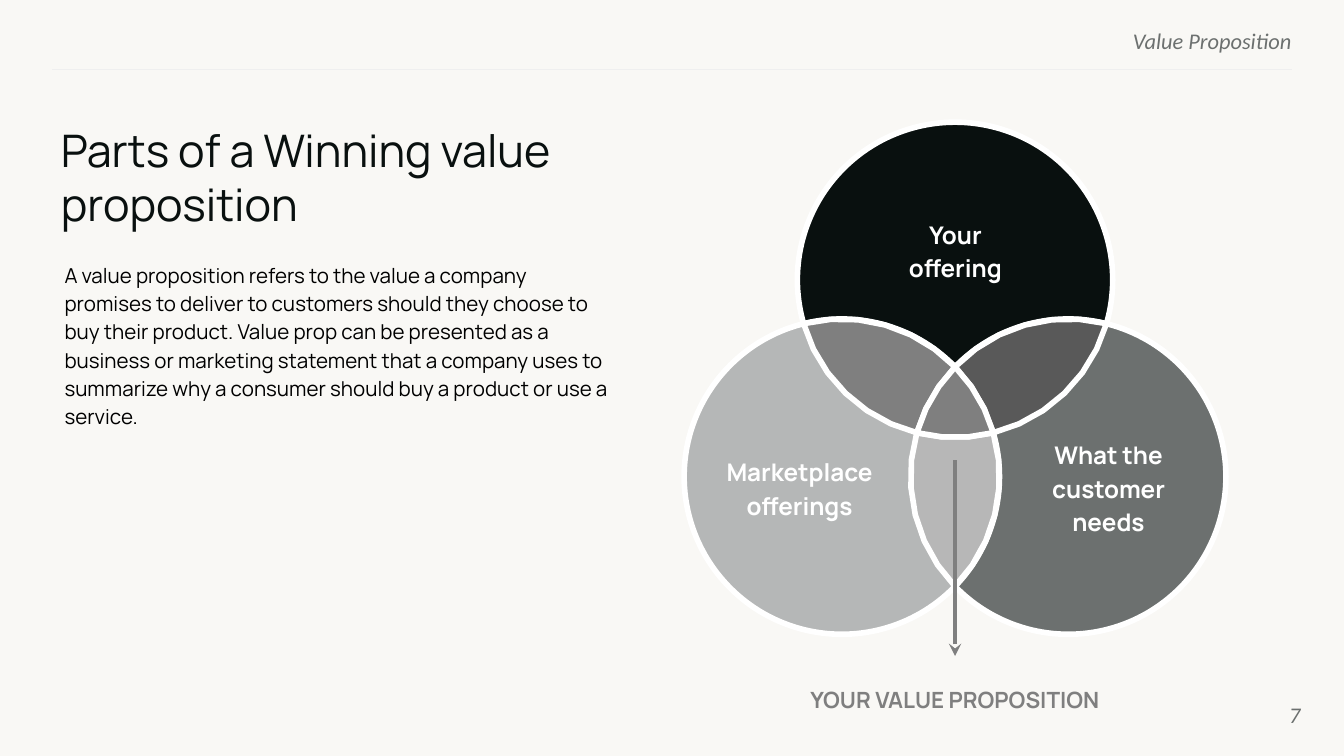
import math
from dataclasses import dataclass

import pptx
import pptx.dml.color
import pptx.enum.shapes
import pptx.enum.text
import pptx.oxml
import pptx.oxml.ns
import pptx.util

Cm = pptx.util.Cm
ALIGN = pptx.enum.text.PP_ALIGN
ANCHOR = pptx.enum.text.MSO_ANCHOR


@dataclass(frozen=True)
class Theme:
    paper: str = "F9F8F5"
    ink: str = "09100F"
    black: str = "000000"
    white: str = "FFFFFF"
    slate: str = "6C706F"
    silver: str = "B5B7B7"
    rule: str = "EFEFEF"
    mid_gray: str = "7F7F7F"
    dark_gray: str = "595959"
    light_gray: str = "B7B7B7"
    heading_font: str = "Manrope"
    running_font: str = "Calibri"
    title_size: float = 24
    label_size: float = 13
    small_size: float = 12
    body_size: float = 11
    outline: float = 3


THEME = Theme()

# Venn geometry in centimetres
RADIUS = 2.98
OFFERING = (18.05, 5.29)
MARKET = (15.91, 9.01)
CUSTOMER = (20.19, 9.01)
CIRCLES = (OFFERING, CUSTOMER, MARKET)
MIDDLE = tuple(sum(axis) / 3 for axis in zip(*CIRCLES))
ARC_STEP = math.radians(11)


def rgb(value):
    return pptx.dml.color.RGBColor.from_string(value)


def set_format(target, values):
    for attribute, value in values.items():
        setattr(target, attribute, value)


def write(shape, text, size, color, font=THEME.heading_font, bold=False,
          italic=False, align=ALIGN.LEFT, anchor=ANCHOR.TOP, spacing=1.0, inset=0):
    frame = shape.text_frame
    frame.text = text
    margin = Cm(inset)
    set_format(frame, {
        "word_wrap": True, "auto_size": pptx.enum.text.MSO_AUTO_SIZE.NONE,
        "vertical_anchor": anchor, "margin_left": margin, "margin_right": margin,
        "margin_top": margin, "margin_bottom": margin})
    paragraph = frame.paragraphs[0]
    set_format(paragraph, {"alignment": align, "line_spacing": spacing})
    letters = paragraph.runs[0].font
    set_format(letters, {"name": font, "size": pptx.util.Pt(size),
                         "bold": bold, "italic": italic})
    letters.color.rgb = rgb(color)


def add_text(slide, box, text, size, color, **style):
    shape = slide.shapes.add_textbox(*map(Cm, box))
    write(shape, text, size, color, **style)


def add_line(slide, start, end, color, width, arrow=False):
    line = slide.shapes.add_connector(
        pptx.enum.shapes.MSO_CONNECTOR.STRAIGHT, *map(Cm, start + end))
    line.line.color.rgb = rgb(color)
    line.line.width = pptx.util.Pt(width)
    if arrow:
        stroke = line.line._get_or_add_ln()
        stroke.append(pptx.oxml.parse_xml(
            f'<a:headEnd {pptx.oxml.ns.nsdecls("a")} type="stealth"/>'))
    line._element.spPr.append(pptx.oxml.parse_xml(
        f'<a:effectLst {pptx.oxml.ns.nsdecls("a")}/>'))


def paint(shape, color):
    shape.shadow.inherit = False
    shape.fill.solid()
    shape.fill.fore_color.rgb = rgb(color)
    shape.line.color.rgb = rgb(THEME.white)
    shape.line.width = pptx.util.Pt(THEME.outline)


def add_circle(slide, center, color):
    x, y = center
    circle = slide.shapes.add_shape(
        pptx.enum.shapes.MSO_SHAPE.OVAL,
        Cm(x - RADIUS), Cm(y - RADIUS), Cm(2 * RADIUS), Cm(2 * RADIUS))
    paint(circle, color)


def crossings(a, b):
    """Points where two circles meet, the one nearest the middle first."""
    dx, dy = b[0] - a[0], b[1] - a[1]
    gap = math.hypot(dx, dy)
    rise = math.sqrt(RADIUS ** 2 - gap ** 2 / 4) / gap
    x, y = (a[0] + b[0]) / 2, (a[1] + b[1]) / 2
    points = [(x - dy * rise * side, y + dx * rise * side) for side in (1, -1)]
    return sorted(points, key=lambda point: math.dist(point, MIDDLE))


def arc(center, start, end):
    """Points along the shorter arc, without its last point."""
    x, y = center
    first, last = (math.atan2(p[1] - y, p[0] - x) for p in (start, end))
    sweep = math.remainder(last - first, math.tau)
    steps = math.ceil(abs(sweep) / ARC_STEP)
    angles = (first + sweep * step / steps for step in range(steps))
    return [(x + RADIUS * math.cos(t), y + RADIUS * math.sin(t)) for t in angles]


def add_overlap(slide, a, b, c, color, central=False):
    """Overlap of a and b outside c, or the area shared by all three."""
    inner, outer = crossings(a, b)
    start = inner if central else outer
    a_c, b_c = crossings(a, c)[0], crossings(b, c)[0]
    outline = arc(a, start, a_c) + arc(c, a_c, b_c) + arc(b, b_c, start)
    points = [(Cm(x), Cm(y)) for x, y in outline]
    builder = slide.shapes.build_freeform(*points[0])
    builder.add_line_segments(points[1:], close=True)
    paint(builder.convert_to_shape(), color)


def add_venn(slide):
    for center, color in zip(CIRCLES, (THEME.ink, THEME.slate, THEME.silver)):
        add_circle(slide, center, color)

    add_overlap(slide, MARKET, OFFERING, CUSTOMER, THEME.mid_gray)
    add_overlap(slide, CUSTOMER, OFFERING, MARKET, THEME.dark_gray)
    add_overlap(slide, MARKET, CUSTOMER, OFFERING, THEME.light_gray)
    add_overlap(slide, MARKET, CUSTOMER, OFFERING, THEME.mid_gray, central=True)

    labels = (
        ("Marketplace offerings", (13.55, 8.71, 3.12, 0.97)),
        ("What the customer needs", (19.35, 8.71, 3.2, 0.97)),
        ("Your offering", (16.81, 4.47, 2.49, 0.48)),
    )
    for text, box in labels:
        add_text(slide, box, text, THEME.label_size, THEME.white, bold=True,
                 align=ALIGN.CENTER, anchor=ANCHOR.MIDDLE, spacing=1.15)

    # Arrow from the shared area to the conclusion, its head at the start
    x = OFFERING[0]
    add_line(slide, (x, 12.4), (x, 8.7), THEME.mid_gray, 2.25, arrow=True)
    add_text(slide, (14.53, 12.85, 7.04, 0.46), "YOUR VALUE PROPOSITION",
             THEME.small_size, THEME.mid_gray, bold=True, align=ALIGN.CENTER,
             anchor=ANCHOR.MIDDLE, spacing=1.57)


def main():
    deck = pptx.Presentation()
    set_format(deck, {"slide_width": Cm(25.4), "slide_height": Cm(14.29)})
    slide = deck.slides.add_slide(deck.slide_layouts[5])
    slide.background.fill.solid()
    slide.background.fill.fore_color.rgb = rgb(THEME.paper)

    # Running header and page number
    running = {"font": THEME.running_font, "italic": True, "align": ALIGN.RIGHT}
    add_text(slide, (14.63, 0.52, 9.78, 0.46), "Value Proposition",
             THEME.small_size, THEME.slate, **running)
    add_line(slide, (24.41, 1.31), (0.99, 1.31), THEME.rule, 0.75)
    add_text(slide, (23.06, 12.97, 1.52, 1.09), "7", THEME.small_size,
             THEME.slate, anchor=ANCHOR.MIDDLE, **running)

    # Title and explanation
    heading = slide.shapes.title
    set_format(heading, {"left": Cm(1.15), "top": Cm(2.32),
                         "width": Cm(9.96), "height": Cm(1.3)})
    write(heading, "Parts of a Winning value proposition",
          THEME.title_size, THEME.ink)
    add_text(slide, (1.14, 4.82, 10.57, 3.33),
             "A value proposition refers to the value a company promises to deliver "
             "to customers should they choose to buy their product. Value prop can be "
             "presented as a business or marketing statement that a company uses to "
             "summarize why a consumer should buy a product or use a service.",
             THEME.body_size, THEME.black, spacing=1.15, inset=0.08)

    add_venn(slide)
    deck.save("out.pptx")


if __name__ == "__main__":
    main()
